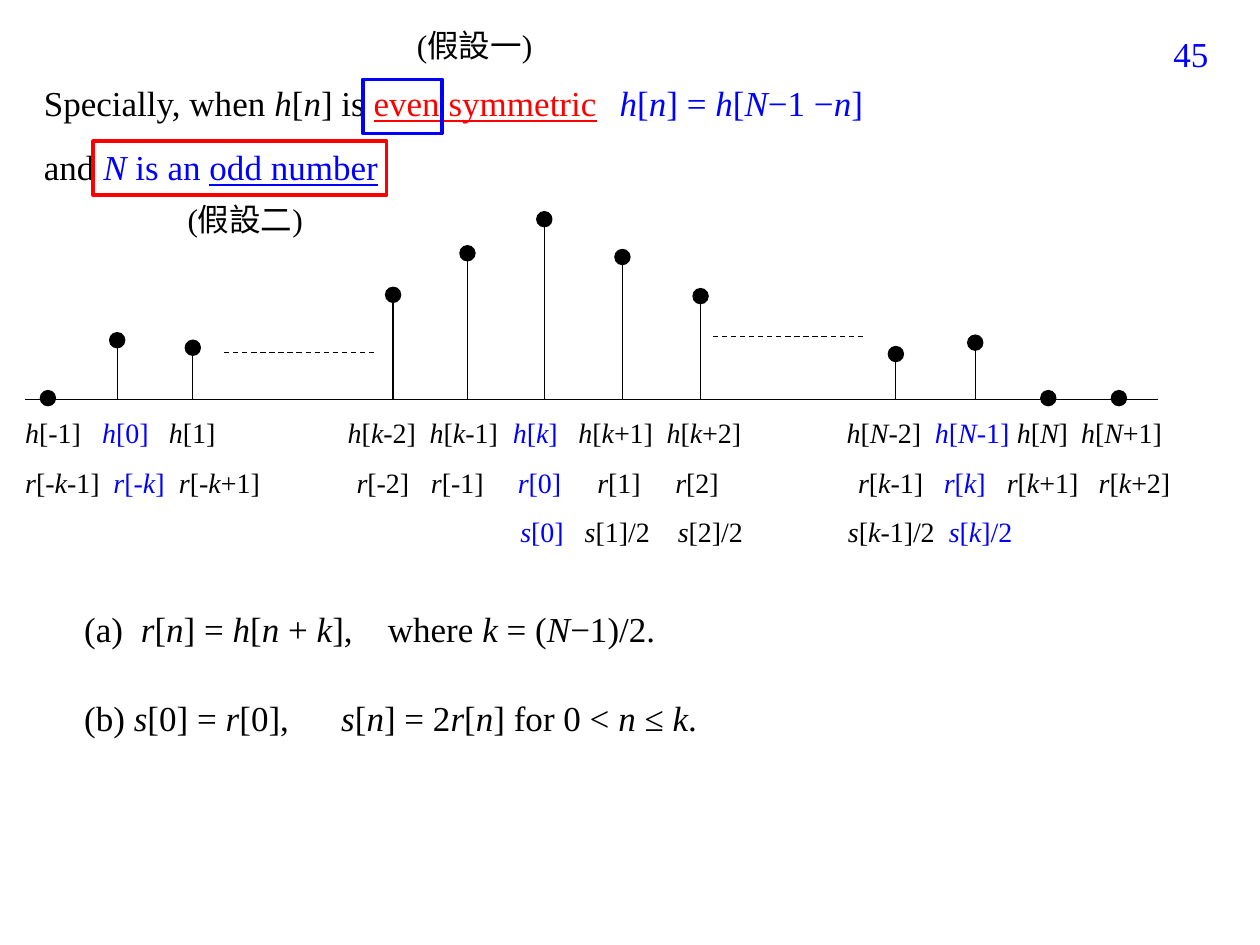
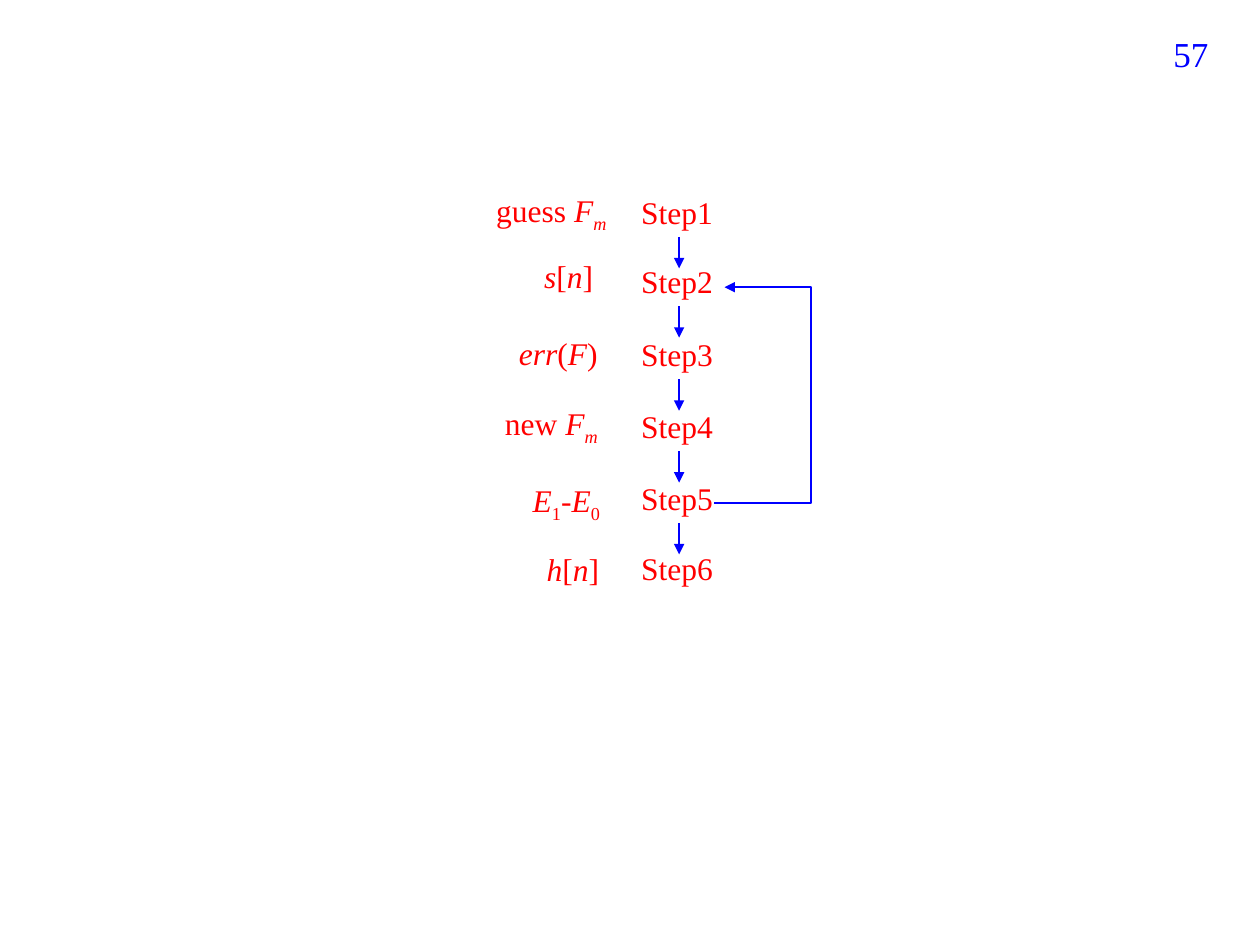
from dataclasses import dataclass

from pptx import Presentation
from pptx.dml.color import RGBColor
from pptx.enum.dml import MSO_LINE_DASH_STYLE as Dash
from pptx.enum.shapes import MSO_CONNECTOR as Connector, MSO_SHAPE as Shape
from pptx.enum.text import MSO_ANCHOR as Anchor, PP_ALIGN as Align
from pptx.oxml.ns import qn
from pptx.util import Inches, Pt
from lxml.etree import SubElement


@dataclass(frozen=True)
class Theme:
    font: str = "Times New Roman"
    black: RGBColor = RGBColor(0, 0, 0)
    white: RGBColor = RGBColor(255, 255, 255)
    blue: RGBColor = RGBColor(0, 0, 255)
    red: RGBColor = RGBColor(255, 0, 0)
    body: Pt = Pt(20)
    label: Pt = Pt(18)
    small: Pt = Pt(16)
    thin: Pt = Pt(0.75)
    arrow: Pt = Pt(1)
    frame: Pt = Pt(2)


THEME = Theme()


def add_text(page, area, lines, size, color=THEME.black, accent=THEME.blue):
    """Write (markup, tab stops) lines; * italic, | accent colour, ~ underline, _ subscript."""
    box = page.shapes.add_textbox(*map(Inches, area))
    frame = box.text_frame
    frame.word_wrap = True
    for number, (markup, tabs) in enumerate(lines):
        para = frame.add_paragraph() if number else frame.paragraphs[0]
        if tabs:
            stops = SubElement(para._p.get_or_add_pPr(), qn("a:tabLst"))
            for stop in tabs:
                SubElement(stops, qn("a:tab"), pos=str(Inches(stop)), algn="l")
        para.font.name, para.font.size = THEME.font, size
        para.font.color.rgb = color
        active, words = set(), ""
        for char in markup + "*":
            if char not in "*|~_":
                words += char
                continue
            if words:
                span = para.add_run()
                span.text = words
                if "*" in active:
                    span.font.italic = True
                if "|" in active:
                    span.font.color.rgb = accent
                if "~" in active:
                    span.font.underline = True
                if "_" in active:
                    span._r.get_or_add_rPr().set("baseline", "-25000")
            active ^= {char}
            words = ""
    return box


def add_line(page, start, end, color=THEME.black, width=THEME.thin,
             kind=Connector.STRAIGHT, arrow=False):
    line = page.shapes.add_connector(kind, *map(Inches, (*start, *end)))
    line.line.color.rgb = color
    line.line.width = width
    if arrow:
        SubElement(line.line._get_or_add_ln(), qn("a:tailEnd"), type="triangle")
    SubElement(line._element.spPr, qn("a:effectLst"))
    return line


deck = Presentation()
deck.slide_width, deck.slide_height = Inches(10), Inches(7.5)
pages = []
for page_number in ("45", "57"):
    page = deck.slides.add_slide(deck.slide_layouts[6])
    box = add_text(page, (7.36, 0.21, 2.33, 0.52), [(page_number, ())],
                   THEME.body, THEME.blue)
    box.text_frame.paragraphs[0].alignment = Align.RIGHT
    pages.append(page)
symmetry_page, steps_page = pages

# Stem plot of the even symmetric filter
AXIS_Y, DOT = 3.17, 0.12
add_line(symmetry_page, (0.2, AXIS_Y), (9.19, AXIS_Y))
for left, y in ((1.78, 2.8), (5.66, 2.67)):
    add_line(symmetry_page, (left, y), (left + 1.21, y)).line.dash_style = Dash.DASH

samples = [(0.38, 3.16), (0.93, 2.7), (1.53, 2.76), (3.12, 2.34), (3.71, 2.01),
           (4.32, 1.74), (4.94, 2.04), (5.56, 2.35), (7.11, 2.81), (7.74, 2.72),
           (8.32, 3.16), (8.88, 3.16)]
for x, y in samples:
    if y < 3.1:
        add_line(symmetry_page, (x, y), (x, AXIS_Y))
    dot = symmetry_page.shapes.add_shape(
        Shape.OVAL, *map(Inches, (x - DOT / 2, y - DOT / 2, DOT, DOT)))
    dot.shadow.inherit = False
    dot.fill.solid()
    dot.fill.fore_color.rgb = THEME.black
    dot.line.color.rgb = THEME.black
    dot.line.width = THEME.thin

# Names of the samples, one tab stop per name
sample_rows = [
    ("*h*[-1]\t|*h*[0]|\t*h*[1]\t*h*[*k*-2]\t*h*[*k*-1]\t|*h*[*k*]|\t*h*[*k*+1]\t*h*[*k*+2]"
     "\t*h*[*N*-2]\t|*h*[*N*-1]|\t*h*[*N*]\t*h*[*N*+1]",
     (0.61, 1.14, 2.56, 3.21, 3.87, 4.39, 5.09, 6.52, 7.22, 7.87, 8.38)),
    ("*r*[-*k*-1]\t|*r*[-*k*]|\t*r*[-*k*+1]\t*r*[-2]\t*r*[-1]\t|*r*[0]|\t*r*[1]\t*r*[2]"
     "\t*r*[*k*-1]\t|*r*[*k*]|\t*r*[*k*+1]\t*r*[*k*+2]",
     (0.7, 1.22, 2.63, 3.22, 3.91, 4.54, 5.16, 6.61, 7.29, 7.79, 8.52)),
    ("\t|*s*[0]|\t*s*[1]/2\t*s*[2]/2\t*s*[*k*-1]/2\t|*s*[*k*]/2|",
     (3.93, 4.44, 5.18, 6.53, 7.33)),
]
names = add_text(symmetry_page, (0.2, 3.3, 9.61, 1.24), sample_rows, THEME.small)
names.fill.solid()
names.fill.fore_color.rgb = THEME.white
frame = names.text_frame
frame.margin_left = frame.margin_right = frame.margin_top = frame.margin_bottom = 0
for para in frame.paragraphs[1:]:
    para.space_before = Pt(9)

# Statements and the two assumptions
statements = [
    ((0.25, 0.6, 8.59, 0.43), "Specially, when *h*[*n*] is |~even symmetric~|", (), THEME.red),
    ((4.82, 0.6, 2.2, 0.43), "|*h*[*n*] = *h*[*N*−1 −*n*]|", (), THEME.blue),
    ((0.25, 1.11, 3.55, 0.43), "and |*N* is an ~odd number~|", (), THEME.blue),
    ((0.57, 4.77, 5.13, 0.43), "(a)\t*r*[*n*] = *h*[*n* + *k*],\twhere *k* = (*N*−1)/2.",
     (0.45, 2.41), THEME.blue),
    ((0.57, 5.48, 5.83, 0.43), "(b) *s*[0] = *r*[0],\t*s*[*n*] = 2*r*[*n*] for 0 < *n* ≤ *k*.",
     (2.04,), THEME.blue),
]
for area, markup, tabs, accent in statements:
    box = add_text(symmetry_page, area, [(markup, tabs)], THEME.body, accent=accent)
    box.text_frame.vertical_anchor = Anchor.MIDDLE

for area, color in (((2.88, 0.63, 0.63, 0.43), THEME.blue),
                    ((0.74, 1.12, 2.33, 0.43), THEME.red)):
    outline = symmetry_page.shapes.add_shape(Shape.RECTANGLE, *map(Inches, area))
    outline.shadow.inherit = False
    outline.fill.background()
    outline.line.color.rgb = color
    outline.line.width = THEME.frame

for left, top, assumption in ((3.21, 0.16, "(假設一)"), (1.39, 1.54, "(假設二)")):
    add_text(symmetry_page, (left, top, 1.26, 0.4), [(assumption, ())], THEME.label)

# Flow of the six steps, each with its result on the left
STEP_LEFT, STEP_WIDTH, STEP_HEIGHT = 4.99, 0.8, 0.4
steps = [
    (1.48, 3.84, 1.47, "guess *F*_*m*_"),
    (2.03, 4.22, 1.99, "*s*[*n*]"),
    (2.61, 4.02, 2.6, "*err*(*F*)"),
    (3.18, 3.91, 3.16, "new *F*_*m*_"),
    (3.75, 4.13, 3.77, "*E*_1_-*E*_0_"),
    (4.31, 4.24, 4.32, "*h*[*n*]"),
]
arrow_x = STEP_LEFT + STEP_WIDTH / 2
for number, (top, result_left, result_top, result) in enumerate(steps, 1):
    step = add_text(steps_page, (STEP_LEFT, top, STEP_WIDTH, STEP_HEIGHT),
                    [(f"Step{number}", ())], THEME.label, THEME.red)
    add_text(steps_page, (result_left, result_top, 1.16, STEP_HEIGHT),
             [(result, ())], THEME.label, THEME.red)
    if number < len(steps):
        bottom = top + STEP_HEIGHT
        arrow = add_line(steps_page, (arrow_x, bottom), (arrow_x, bottom + 0.25),
                         THEME.blue, THEME.arrow, arrow=True)
        arrow.begin_connect(step, 2)

# Loop from step 5 back to step 2, bending at the given share of its width
loop_start, loop_end, bend_x = (5.67, 3.99), (5.75, 2.28), 6.44
loop = add_line(steps_page, loop_start, loop_end, THEME.blue, THEME.arrow,
                Connector.ELBOW, arrow=True)
bend = (bend_x - loop_start[0]) / (loop_end[0] - loop_start[0])
SubElement(loop._element.spPr.prstGeom.get_or_add_avLst(), qn("a:gd"),
           name="adj1", fmla=f"val {round(bend * 100000)}")

deck.save("out.pptx")
